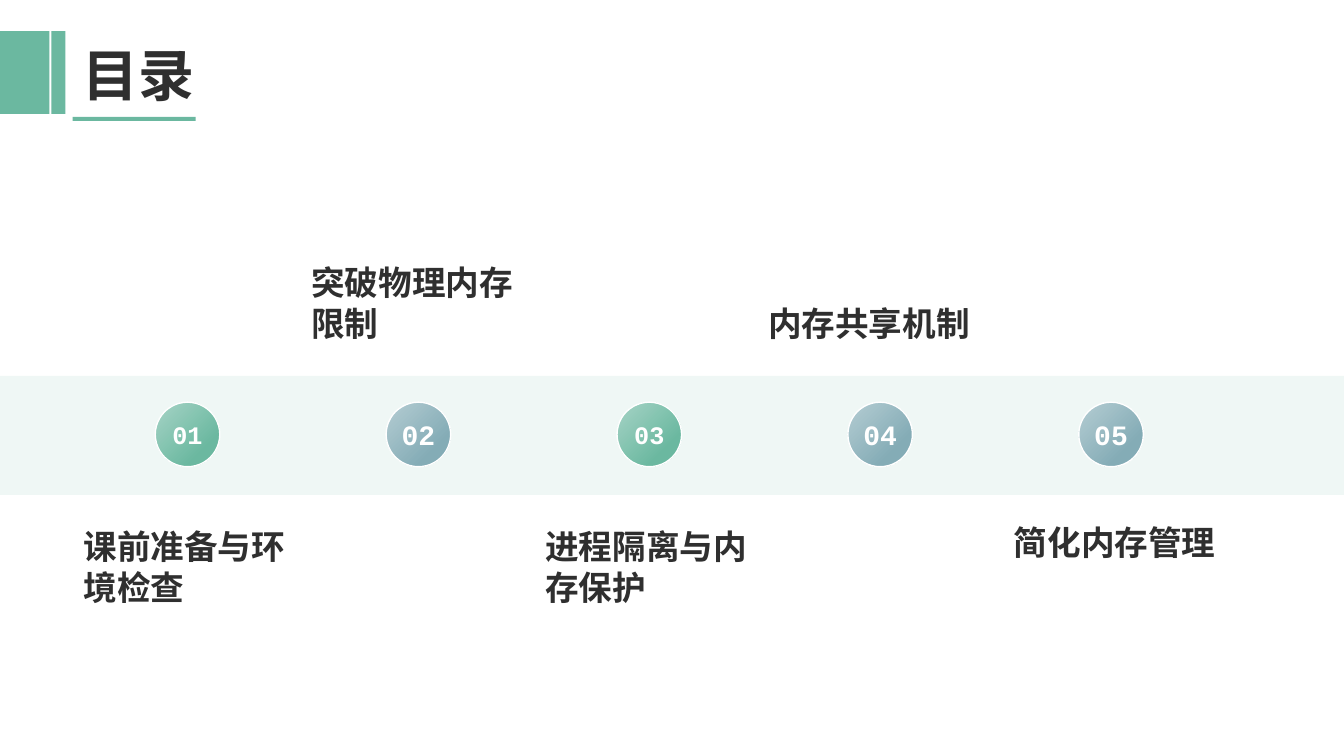
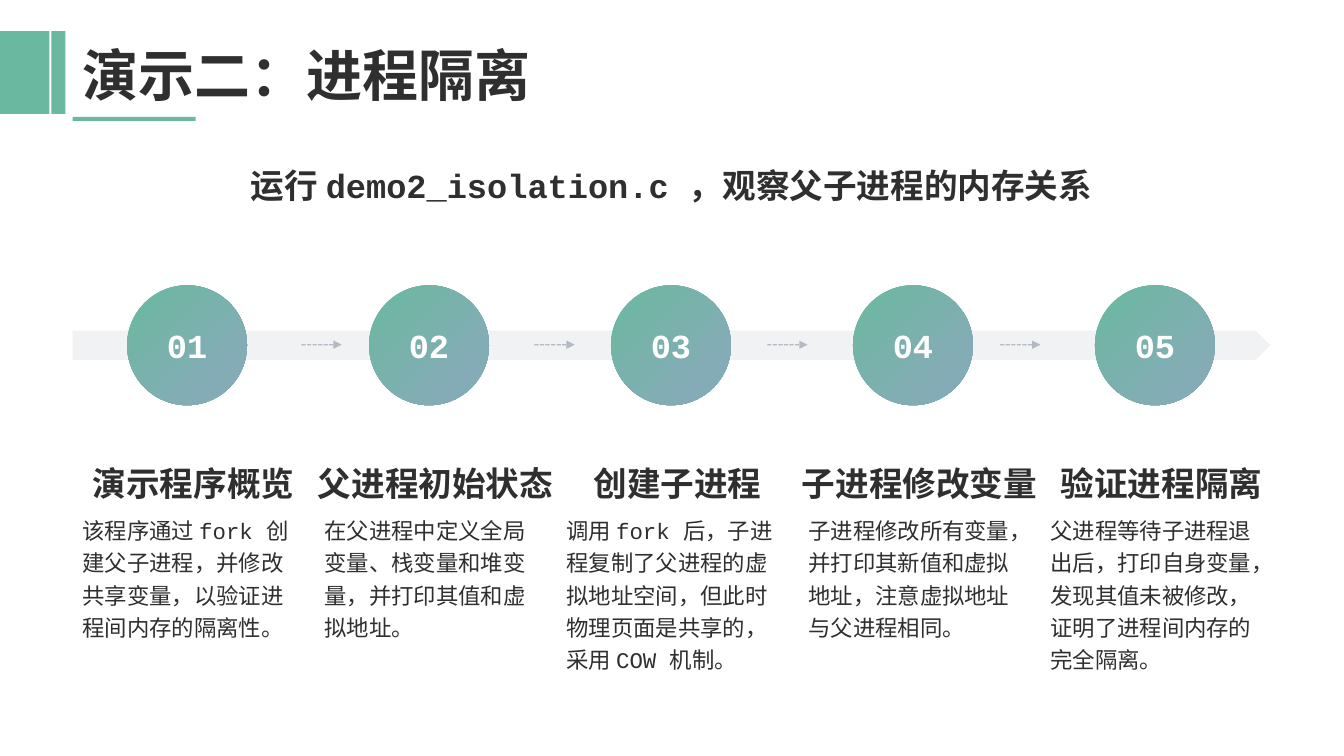
from lxml.etree import SubElement
from pptx import Presentation
from pptx.dml.color import RGBColor
from pptx.enum.dml import MSO_LINE
from pptx.enum.shapes import MSO_CONNECTOR, MSO_SHAPE
from pptx.enum.text import MSO_ANCHOR, PP_ALIGN
from pptx.oxml.ns import qn
from pptx.util import Inches, Pt

GREEN = RGBColor(0x6B, 0xB8, 0xA0)
LIGHT_GREEN = RGBColor(0xA6, 0xD4, 0xC6)
BLUE = RGBColor(0x84, 0xAC, 0xB6)
LIGHT_BLUE = RGBColor(0xB5, 0xCD, 0xD3)
SLATE = RGBColor(0x77, 0x84, 0x95)
INK = RGBColor(0x2F, 0x2F, 0x2F)
WHITE = RGBColor(0xFF, 0xFF, 0xFF)

LATIN_FONT = "Courier New"
CHINESE_FONT = "Noto Sans CJK SC"

MARGIN = 0.72
CONTENT_WIDTH = 11.88

# Number size, circle gradient, label, label left, label top
AGENDA = [
    (18, (LIGHT_GREEN, GREEN), "课前准备与环境检查", 0.73, 5.17),
    (20, (LIGHT_BLUE, BLUE), "突破物理内存限制", 2.99, 2.67),
    (18, (LIGHT_GREEN, GREEN), "进程隔离与内存保护", 5.31, 5.17),
    (20, (LIGHT_BLUE, BLUE), "内存共享机制", 7.52, 2.67),
    (20, (LIGHT_BLUE, BLUE), "简化内存管理", 9.9, 5.13),
]
AGENDA_BAND_TOP = 3.73
AGENDA_PITCH = 2.29

STEPS = [
    ("演示程序概览",
     "该程序通过 fork 创建父子进程，并修改共享变量，以验证进程间内存的隔离性。"),
    ("父进程初始状态",
     "在父进程中定义全局变量、栈变量和堆变量，并打印其值和虚拟地址。"),
    ("创建子进程",
     "调用 fork 后，子进程复制了父进程的虚拟地址空间，但此时物理页面是共享的，采用 COW 机制。"),
    ("子进程修改变量",
     "子进程修改所有变量，并打印其新值和虚拟地址，注意虚拟地址与父进程相同。"),
    ("验证进程隔离",
     "父进程等待子进程退出后，打印自身变量，发现其值未被修改，证明了进程间内存的完全隔离。"),
]
STEP_PITCH = 2.4
ARROW_PITCH = 2.31


def write(frame, text, size, color=INK, bold=True, align=PP_ALIGN.LEFT,
          anchor=MSO_ANCHOR.TOP, spacing=None):
    frame.text = text
    frame.vertical_anchor = anchor
    para = frame.paragraphs[0]
    para.alignment = align
    if spacing:
        para.line_spacing = spacing
    font = para.font
    font.name = LATIN_FONT
    font.size = Pt(size)
    font.bold = bold
    font.color.rgb = color
    properties = para._p.pPr.find(qn("a:defRPr"))
    SubElement(properties, qn("a:ea"), typeface=CHINESE_FONT)


def add_text(slide, left, top, width, height, text, size, **style):
    box = slide.shapes.add_textbox(
        Inches(left), Inches(top), Inches(width), Inches(height))
    box.text_frame.word_wrap = True
    write(box.text_frame, text, size, **style)


def set_opacity(shape, percent):
    """Apply an opacity to the fill and line colours of a shape."""
    for color in shape.element.spPr.iter(qn("a:srgbClr")):
        SubElement(color, qn("a:alpha"), val=str(percent * 1000))


def add_band(slide, left, top, width, height, color,
             kind=MSO_SHAPE.RECTANGLE, opacity=None):
    band = slide.shapes.add_shape(
        kind, Inches(left), Inches(top), Inches(width), Inches(height))
    band.shadow.inherit = False
    band.fill.solid()
    band.fill.fore_color.rgb = color
    band.line.fill.background()
    if opacity:
        set_opacity(band, opacity)
    return band


def add_number(slide, left, top, diameter, number, size, colors, last_stop,
               outlined=False):
    """Add a gradient circle holding a two-digit number."""
    circle = slide.shapes.add_shape(
        MSO_SHAPE.OVAL, Inches(left), Inches(top),
        Inches(diameter), Inches(diameter))
    circle.shadow.inherit = False
    circle.fill.gradient()
    circle.fill.gradient_angle = 315
    for stop, color, position in zip(
            circle.fill.gradient_stops, colors, (0, last_stop)):
        stop.color.rgb = color
        stop.position = position
    if outlined:
        circle.line.color.rgb = WHITE
        circle.line.width = Pt(1)
    else:
        circle.line.fill.background()
    circle.text_frame.word_wrap = False
    write(circle.text_frame, f"{number:02}", size, color=WHITE,
          align=PP_ALIGN.CENTER, anchor=MSO_ANCHOR.MIDDLE)


def add_dashed_arrow(slide, left, top, length):
    arrow = slide.shapes.add_connector(
        MSO_CONNECTOR.STRAIGHT, Inches(left), Inches(top),
        Inches(left + length), Inches(top))
    arrow.line.color.rgb = SLATE
    arrow.line.width = Pt(1)
    arrow.line.dash_style = MSO_LINE.SQUARE_DOT
    set_opacity(arrow, 50)
    properties = arrow.element.spPr
    SubElement(properties.find(qn("a:ln")), qn("a:tailEnd"), type="triangle")
    SubElement(properties, qn("a:effectLst"))


def decorate_layout(layout, slide):
    """Place the title and its green marks on the layout, drawing via slide."""
    title = layout.placeholders[0]
    title.left, title.top = Inches(MARGIN), Inches(0.14)
    title.width, title.height = Inches(CONTENT_WIDTH), Inches(0.98)
    for place in ((MARGIN, 1.16, 1.22, 0.04),
                  (0, 0.31, 0.49, 0.82),
                  (0.51, 0.31, 0.14, 0.82)):
        mark = add_band(slide, *place, GREEN)
        layout.shapes.element.insert(2, mark.element)


def add_title(slide, text):
    write(slide.shapes.title.text_frame, text, 40, anchor=MSO_ANCHOR.BOTTOM)


def fill_agenda(slide):
    add_title(slide, "目录")
    add_band(slide, 0, AGENDA_BAND_TOP, 13.33, 1.18, GREEN, opacity=10)
    for index, (size, colors, label, left, top) in enumerate(AGENDA):
        add_number(slide, 1.54 + index * AGENDA_PITCH, 3.99, 0.64,
                   index + 1, size, colors, 0.75, outlined=True)
        above = top < AGENDA_BAND_TOP
        last = index == len(AGENDA) - 1
        add_text(slide, left, top, 2.31, 0.78, label, 24,
                 align=PP_ALIGN.CENTER if last else PP_ALIGN.LEFT,
                 anchor=MSO_ANCHOR.BOTTOM if above else MSO_ANCHOR.TOP)


def fill_process(slide):
    add_title(slide, "演示二：进程隔离")
    add_band(slide, MARGIN, 3.28, CONTENT_WIDTH, 0.29, SLATE,
             kind=MSO_SHAPE.PENTAGON, opacity=10)
    for index in range(len(STEPS) - 1):
        add_dashed_arrow(slide, 2.99 + index * ARROW_PITCH, 3.42, 0.4)
    add_text(slide, MARGIN, 1.24, CONTENT_WIDTH, 1.19,
             "运行 demo2_isolation.c ，观察父子进程的内存关系", 24,
             align=PP_ALIGN.CENTER, anchor=MSO_ANCHOR.MIDDLE)
    for index, (heading, detail) in enumerate(STEPS):
        offset = index * STEP_PITCH
        add_number(slide, 1.26 + offset, 2.83, 1.19, index + 1, 24,
                   (GREEN, BLUE), 0.78)
        add_text(slide, 0.64 + offset, 4.16, 2.56, 0.88, heading, 24,
                 align=PP_ALIGN.CENTER, anchor=MSO_ANCHOR.BOTTOM)
        add_text(slide, MARGIN + offset, 5.03, 2.27, 1.67, detail, 16,
                 bold=False, spacing=1.2)


def main():
    deck = Presentation()
    deck.slide_width, deck.slide_height = Inches(13.33), Inches(7.5)
    layout = deck.slide_layouts.get_by_name("Title Only")
    agenda = deck.slides.add_slide(layout)
    decorate_layout(layout, agenda)
    fill_agenda(agenda)
    fill_process(deck.slides.add_slide(layout))
    deck.save("out.pptx")


if __name__ == "__main__":
    main()
